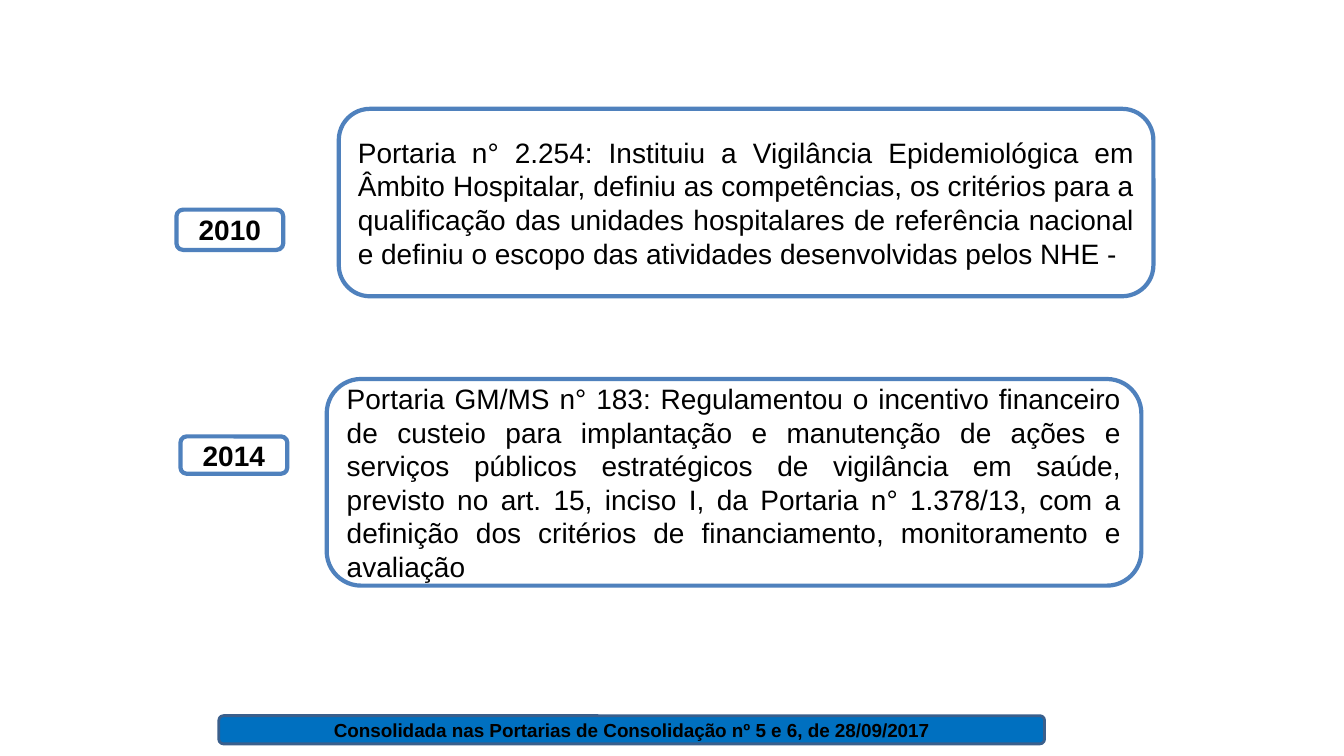
from pptx import Presentation
from pptx.dml.color import RGBColor
from pptx.enum.shapes import MSO_SHAPE
from pptx.enum.text import MSO_ANCHOR, PP_ALIGN
from pptx.util import Inches, Pt

ROUNDED = MSO_SHAPE.ROUNDED_RECTANGLE
MIDDLE = MSO_ANCHOR.MIDDLE
CENTER, JUSTIFY = PP_ALIGN.CENTER, PP_ALIGN.JUSTIFY

BORDER, BANNER_FILL, BANNER_BORDER, INK = "4F81BD", "0070C0", "3A5F8C", "000000"
YEAR_WIDTH, CARD_WIDTH = 1.06, 8.08

# row box (left, top, width, height), year box (offset from row top, height), year, text
ORDINANCES = [
    ((1.75, 1.08, 9.69, 1.86), (1.0, 0.4), "2010",
     "Portaria n° 2.254: Instituiu a Vigilância Epidemiológica em Âmbito Hospitalar, "
     "definiu as competências, os critérios para a qualificação das unidades hospitalares "
     "de referência nacional e definiu o escopo das atividades desenvolvidas pelos NHE -"),
    ((1.79, 3.76, 9.53, 2.05), (0.57, 0.37), "2014",
     "Portaria GM/MS n° 183: Regulamentou o incentivo financeiro de custeio para "
     "implantação e manutenção de ações e serviços públicos estratégicos de vigilância "
     "em saúde, previsto no art. 15, inciso I, da Portaria n° 1.378/13, com a definição "
     "dos critérios de financiamento, monitoramento e avaliação"),
]


def color(hex_value):
    return RGBColor.from_string(hex_value)


def write(shape, text, size=20, bold=False, align=CENTER):
    frame = shape.text_frame
    frame.word_wrap = True
    frame.vertical_anchor = MIDDLE
    paragraph = frame.paragraphs[0]
    paragraph.alignment = align
    run = paragraph.add_run()
    run.text = text
    run.font.name = "Arial"
    run.font.size = Pt(size)
    run.font.bold = bold
    run.font.color.rgb = color(INK)


def add_rounded_box(slide, box, fill=None, border=BORDER, border_width=3):
    shape = slide.shapes.add_shape(ROUNDED, *(Inches(length) for length in box))
    shape.shadow.inherit = False
    if fill:
        shape.fill.solid()
        shape.fill.fore_color.rgb = color(fill)
    else:
        shape.fill.background()
    shape.line.color.rgb = color(border)
    shape.line.width = Pt(border_width)
    return shape


def add_ordinance(slide, box, year_span, year, summary):
    """Place the year at the left edge of the box and the summary at its right edge."""
    left, top, width, height = box
    year_offset, year_height = year_span
    card = add_rounded_box(slide, (left + width - CARD_WIDTH, top, CARD_WIDTH, height))
    write(card, summary, align=JUSTIFY)
    year_box = add_rounded_box(slide, (left, top + year_offset, YEAR_WIDTH, year_height))
    write(year_box, year, bold=True)


def add_banner(slide, box, text):
    banner = add_rounded_box(slide, box, BANNER_FILL, BANNER_BORDER, 2)
    write(banner, text, size=13.5, bold=True)


def main():
    deck = Presentation()
    deck.slide_width, deck.slide_height = Inches(13.33), Inches(7.5)
    slide = deck.slides.add_slide(deck.slide_layouts[6])
    for ordinance in ORDINANCES:
        add_ordinance(slide, *ordinance)
    add_banner(slide, (2.17, 7.1, 8.19, 0.28),
               "Consolidada nas Portarias de Consolidação nº 5 e 6, de 28/09/2017")
    deck.save("out.pptx")


if __name__ == "__main__":
    main()
